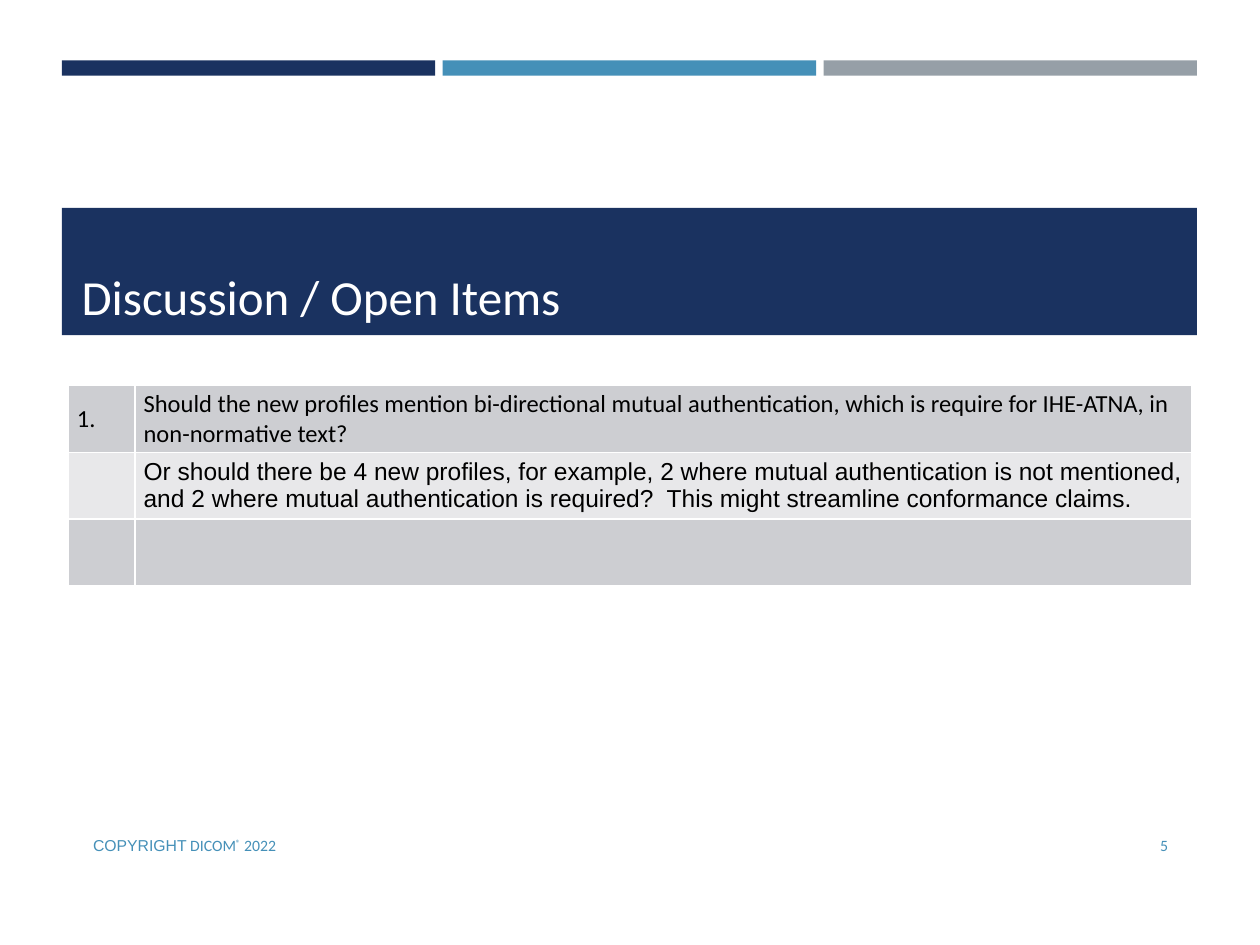
from dataclasses import dataclass

import lxml.etree
import pptx
import pptx.dml.color
import pptx.enum.shapes
import pptx.enum.text
import pptx.oxml.ns
import pptx.util

Inches = pptx.util.Inches
Pt = pptx.util.Pt
Anchor = pptx.enum.text.MSO_ANCHOR
Align = pptx.enum.text.PP_ALIGN


@dataclass(frozen=True)
class Theme:
    navy: str = "1A3260"
    blue: str = "4590B8"
    gray: str = "969FA7"
    white: str = "FFFFFF"
    black: str = "000000"
    bands: tuple = ("CDCED2", "E8E8EA")
    body_font: str = "Calibri"
    alternate_font: str = "Arial"
    title_size: int = 28
    table_size: int = 14
    footer_size: int = 9


THEME = Theme()

TABLE_ROWS = (
    (
        "1.",
        "Should the new profiles mention bi-directional mutual authentication, "
        "which is require for IHE-ATNA, in non-normative text?",
        THEME.body_font,
    ),
    (
        "",
        "Or should there be 4 new profiles, for example, 2 where mutual "
        "authentication is not mentioned, and 2 where mutual authentication is "
        "required?  This might streamline conformance claims.",
        THEME.alternate_font,
    ),
    ("", "", THEME.body_font),
)


def rgb(color):
    return pptx.dml.color.RGBColor.from_string(color)


def style_font(font, name, size, color):
    font.name = name
    font.size = Pt(size)
    font.color.rgb = rgb(color)


def add_bar(slide, left, top, width, height, color):
    shape = slide.shapes.add_shape(
        pptx.enum.shapes.MSO_SHAPE.RECTANGLE,
        Inches(left), Inches(top), Inches(width), Inches(height),
    )
    shape.shadow.inherit = False
    shape.fill.solid()
    shape.fill.fore_color.rgb = rgb(color)
    shape.line.fill.background()


def add_text(slide, left, top, width, height, runs, size, color,
             anchor=Anchor.MIDDLE, alignment=Align.LEFT):
    shape = slide.shapes.add_textbox(
        Inches(left), Inches(top), Inches(width), Inches(height)
    )
    text_frame = shape.text_frame
    text_frame.word_wrap = True
    text_frame.vertical_anchor = anchor
    paragraph = text_frame.paragraphs[0]
    paragraph.alignment = alignment
    for text, font_name in runs:
        run = paragraph.add_run()
        run.text = text
        style_font(run.font, font_name, size, color)
    return paragraph


def add_cell_borders(cell, color, width):
    properties = cell._tc.get_or_add_tcPr()
    qualified = pptx.oxml.ns.qn
    for side in ("lnL", "lnR", "lnT", "lnB"):
        line = lxml.etree.SubElement(
            properties, qualified(f"a:{side}"), w=str(int(Pt(width)))
        )
        fill = lxml.etree.SubElement(line, qualified("a:solidFill"))
        lxml.etree.SubElement(fill, qualified("a:srgbClr"), val=color)


def fill_cell(cell, text, font_name, band):
    add_cell_borders(cell, THEME.white, 1)
    cell.fill.solid()
    cell.fill.fore_color.rgb = rgb(band)
    cell.vertical_anchor = Anchor.MIDDLE
    cell.margin_left = cell.margin_right = Inches(0.07)
    cell.margin_top = cell.margin_bottom = 0
    if text:
        paragraph = cell.text_frame.paragraphs[0]
        paragraph.text = text
        paragraph.space_after = Pt(2)
        style_font(paragraph.runs[0].font, font_name, THEME.table_size, THEME.black)


def add_items_table(slide):
    column_widths = (0.53, 8.39)
    row_height = 0.53
    table = slide.shapes.add_table(
        len(TABLE_ROWS), len(column_widths), Inches(0.54), Inches(3.06),
        Inches(sum(column_widths)), Inches(row_height * len(TABLE_ROWS)),
    ).table
    table.first_row = False
    table.horz_banding = False
    for column, width in zip(table.columns, column_widths):
        column.width = Inches(width)
    for index, (number, item, item_font) in enumerate(TABLE_ROWS):
        table.rows[index].height = Inches(row_height)
        band = THEME.bands[index % len(THEME.bands)]
        fill_cell(table.cell(index, 0), number, THEME.body_font, band)
        fill_cell(table.cell(index, 1), item, item_font, band)


def add_footer(slide):
    copyright_runs = (
        ("COPYRIGHT", THEME.alternate_font),
        (" DICOM", THEME.body_font),
        ("®", THEME.body_font),
        (" 2022", THEME.body_font),
    )
    paragraph = add_text(slide, 0.64, 6.51, 5.33, 0.4, copyright_runs,
                         THEME.footer_size, THEME.blue)
    paragraph.runs[2].font._element.set("baseline", "30000")
    add_text(slide, 8.53, 6.51, 0.84, 0.4, [("5", THEME.body_font)],
             THEME.footer_size, THEME.blue, alignment=Align.RIGHT)


def main():
    presentation = pptx.Presentation()
    presentation.slide_width = Inches(10)
    presentation.slide_height = Inches(7.5)
    slide = presentation.slides.add_slide(presentation.slide_layouts[6])

    left, total_width, gap = 0.49, 9.01, 0.06
    bar_colors = (THEME.navy, THEME.blue, THEME.gray)
    bar_width = (total_width - gap * (len(bar_colors) - 1)) / len(bar_colors)
    for index, color in enumerate(bar_colors):
        add_bar(slide, left + index * (bar_width + gap), 0.48, bar_width, 0.12, color)

    add_bar(slide, left, 1.65, total_width, 1.01, THEME.navy)
    add_text(slide, 0.55, 1.72, 8.74, 0.91,
             [("Discussion / Open Items", THEME.body_font)],
             THEME.title_size, THEME.white, anchor=Anchor.BOTTOM)
    add_items_table(slide)
    add_footer(slide)
    presentation.save("out.pptx")


if __name__ == "__main__":
    main()
